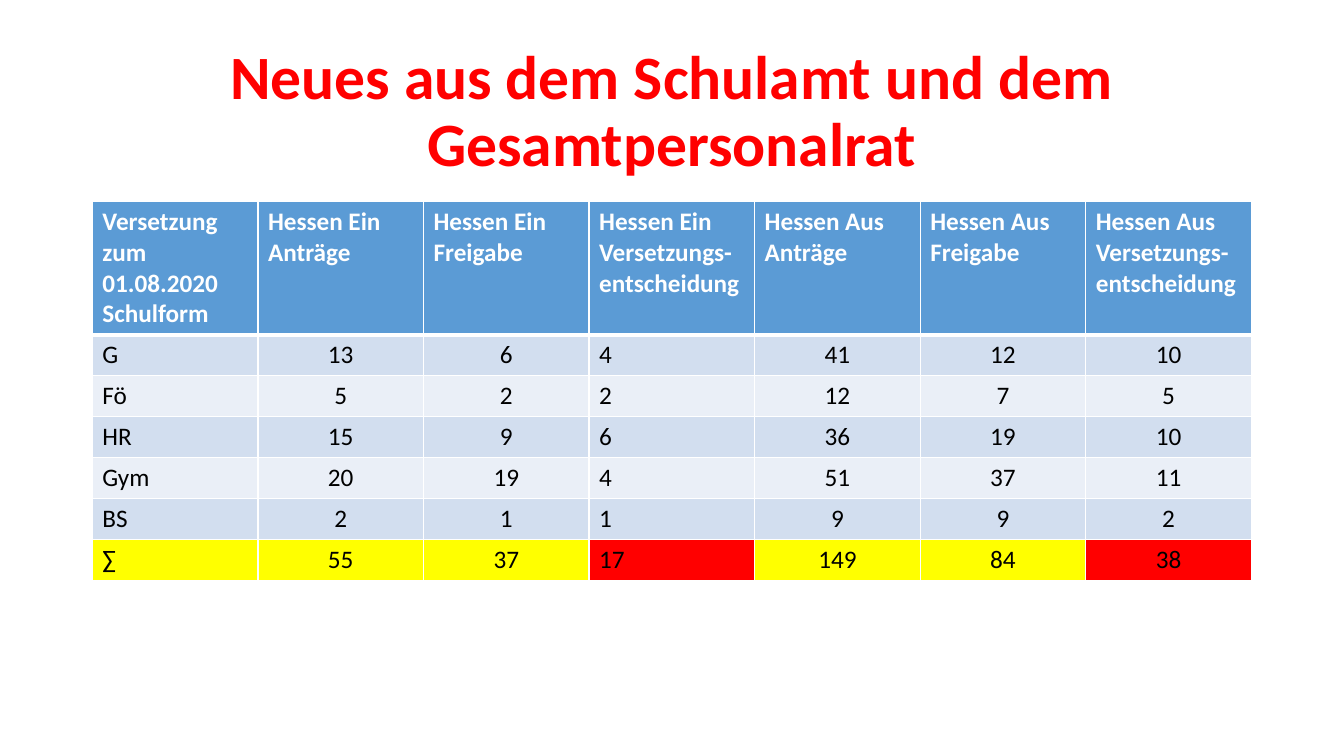
from lxml.etree import SubElement as Sub
from pptx import Presentation
from pptx.dml.color import RGBColor as Rgb
from pptx.enum.text import MSO_ANCHOR as Anchor, MSO_AUTO_SIZE as Auto, PP_ALIGN as Align
from pptx.oxml.ns import qn
from pptx.util import Pt

PX = 9525  # 96 px to the inch
FONT = "Calibri"
HUES = {
    "red": "FF0000", "white": "FFFFFF", "black": "000000", "head": "5B9BD5",
    "dark": "D2DEEF", "light": "EAEFF7", "sum": "FFFF00",
}
TITLE = "Neues aus dem Schulamt und dem Gesamtpersonalrat"
HEADS = [
    ["Versetzung zum 01.08.2020", "Schulform"],
    ["Hessen Ein Anträge"],
    ["Hessen Ein", "Freigabe"],
    ["Hessen Ein", "Versetzungs-", "entscheidung"],
    ["Hessen Aus Anträge"],
    ["Hessen Aus", "Freigabe"],
    ["Hessen Aus", "Versetzungs-", "entscheidung"],
]
ROWS = [
    ["G", 13, 6, 4, 41, 12, 10],
    ["Fö", 5, 2, 2, 12, 7, 5],
    ["HR", 15, 9, 6, 36, 19, 10],
    ["Gym", 20, 19, 4, 51, 37, 11],
    ["BS", 2, 1, 1, 9, 9, 2],
    ["∑", 55, 37, 17, 149, 84, 38],
]
LEFT_COLS = (0, 3)
FINAL_COLS = (3, 6)  # decisions, marked red in the sum row


def px(*vals):
    return [val * PX for val in vals]


def add_run(para, text, size, hue, bold):
    run = para.add_run()
    run.text = text
    font = run.font
    font.name, font.size, font.bold = FONT, Pt(size), bold
    font.color.rgb = Rgb.from_string(HUES[hue])


def add_title(slide):
    title = slide.shapes.title
    title.left, title.top, title.width, title.height = px(88, 38, 1104, 139)
    frame = title.text_frame
    frame.word_wrap, frame.auto_size = True, Auto.NONE
    frame.vertical_anchor = Anchor.MIDDLE
    para = frame.paragraphs[0]
    para.alignment, para.line_spacing = Align.CENTER, 0.9
    add_run(para, TITLE, 44, "red", True)


def add_edges(cell, top, base):
    props = cell._tc.get_or_add_tcPr()
    for tag, wide in (("lnL", 1), ("lnR", 1), ("lnT", top), ("lnB", base)):
        line = Sub(props, qn(f"a:{tag}"), w=str(Pt(wide)))
        fill = Sub(line, qn("a:solidFill"))
        Sub(fill, qn("a:srgbClr"), val=HUES["white"])


def fill_cell(cell, texts, back, hue, bold, align):
    cell.fill.solid()
    cell.fill.fore_color.rgb = Rgb.from_string(HUES[back])
    frame = cell.text_frame
    for num, text in enumerate(texts):
        para = frame.add_paragraph() if num else frame.paragraphs[0]
        para.alignment = align
        add_run(para, text, 18, hue, bold)


def pick_back(row, col):
    if row == len(ROWS):
        return "red" if col in FINAL_COLS else "sum"
    return "dark" if row % 2 else "light"


def add_grid(slide):
    shape = slide.shapes.add_table(len(ROWS) + 1, len(HEADS), *px(88, 192, 1104, 358))
    table = shape.table
    table.first_row = table.horz_banding = False
    for row, line in enumerate(table.rows):
        line.height = (39 if row else 124) * PX
        for col, cell in enumerate(line.cells):
            # The rule under the header is thicker
            add_edges(cell, 3 if row == 1 else 1, 1 if row else 3)
            if row:
                align = Align.LEFT if col in LEFT_COLS else Align.CENTER
                text = str(ROWS[row - 1][col])
                fill_cell(cell, [text], pick_back(row, col), "black", False, align)
            else:
                fill_cell(cell, HEADS[col], "head", "white", True, Align.LEFT)


def main():
    deck = Presentation()
    deck.slide_width, deck.slide_height = px(1280, 720)
    slide = deck.slides.add_slide(deck.slide_layouts[5])
    add_title(slide)
    add_grid(slide)
    deck.save("out.pptx")


if __name__ == "__main__":
    main()
